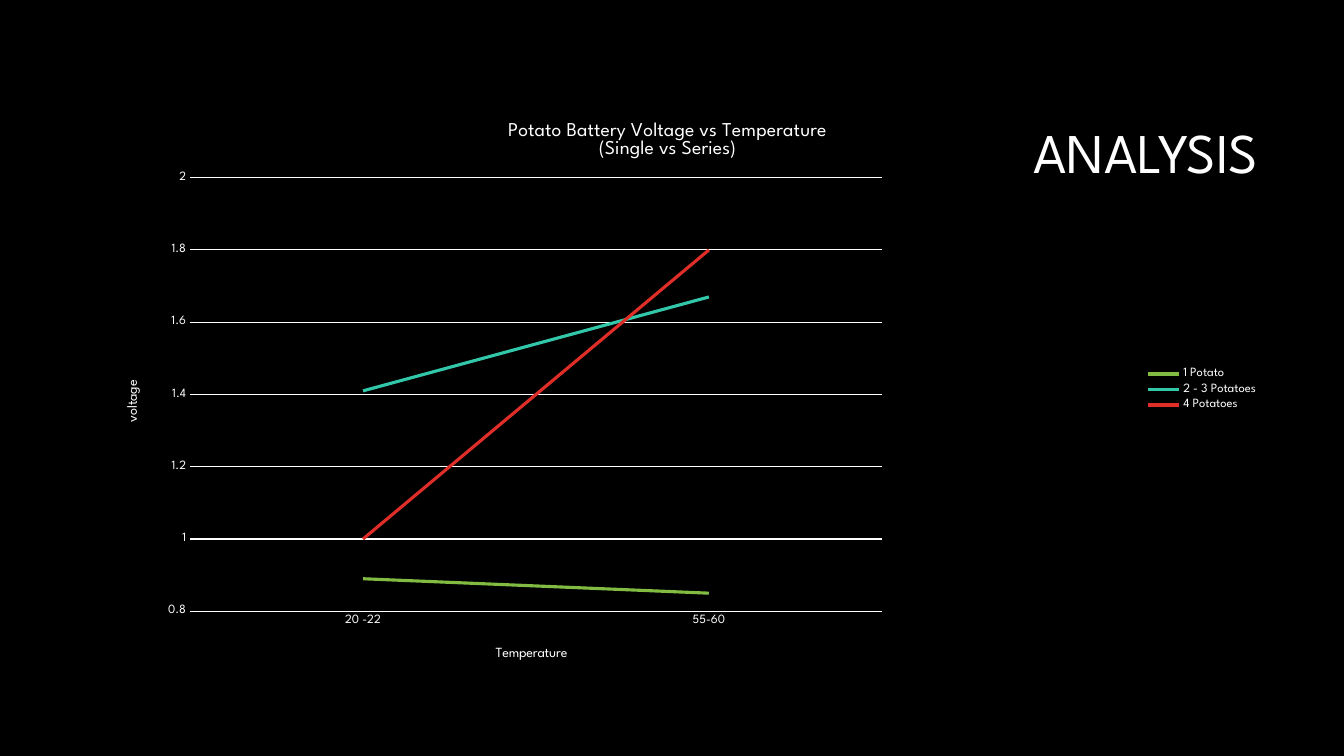
from dataclasses import dataclass

from lxml import etree
from pptx import Presentation
from pptx.chart import data as cd
from pptx.dml.color import RGBColor
from pptx.enum import chart as ec, text as et
from pptx.oxml import ns
from pptx.util import Pt

FONT = "League Spartan"
BLACK = RGBColor(0x00, 0x00, 0x00)
WHITE = RGBColor(0xFF, 0xFF, 0xFF)
GREEN = RGBColor(0x81, 0xBB, 0x42)
TEAL = RGBColor(0x32, 0xC7, 0xA9)
RED = RGBColor(0xDF, 0x2E, 0x28)


@dataclass(frozen=True)
class Battery:
    name: str
    volts: tuple[float, ...]
    color: RGBColor


TEMPERATURES = ("20 -22", "55-60")
BATTERIES = (
    Battery("1 Potato", (0.89, 0.85), GREEN),
    Battery("2 - 3 Potatoes", (1.41, 1.67), TEAL),
    Battery("4 Potatoes", (1, 1.8), RED),
)


def style_font(font, size: float) -> None:
    font.name = FONT
    font.size = Pt(size)
    font.bold = False
    font.color.rgb = WHITE


def style_line(line, color: RGBColor, width: float) -> None:
    line.color.rgb = color
    line.width = Pt(width)


def set_layout(parent, **values) -> None:
    """Place a chart part by fractions of the chart area."""
    layout = parent.find(ns.qn("c:layout"))
    if layout is None:
        layout = etree.Element(ns.qn("c:layout"))
        tx = parent.find(ns.qn("c:tx"))
        parent.insert(0 if tx is None else parent.index(tx) + 1, layout)
    for child in list(layout):
        layout.remove(child)
    manual = etree.SubElement(layout, ns.qn("c:manualLayout"))
    for tag, value in values.items():
        etree.SubElement(manual, ns.qn(f"c:{tag}")).set("val", str(value))


def write_title(title, lines: tuple[str, ...], size: float, x: float, y: float) -> None:
    tf = title.text_frame
    for i, line in enumerate(lines):
        p = tf.add_paragraph() if i else tf.paragraphs[0]
        r = p.add_run()
        r.text = line
        style_font(r.font, size)
    set_layout(title._element, xMode="edge", yMode="edge", x=x, y=y)


def style_axis(axis, caption: str, x: float, y: float) -> None:
    axis.major_tick_mark = axis.minor_tick_mark = ec.XL_TICK_MARK.NONE
    style_font(axis.tick_labels.font, 9)
    write_title(axis.axis_title, (caption,), 10, x, y)


def add_heading(s) -> None:
    sp = s.shapes.title
    sp.left, sp.top, sp.width, sp.height = Pt(228), Pt(60.5), Pt(678), Pt(101.5)
    tf = sp.text_frame
    tf.vertical_anchor = et.MSO_ANCHOR.MIDDLE
    p = tf.paragraphs[0]
    p.alignment = et.PP_ALIGN.RIGHT
    p.line_spacing = 0.9
    r = p.add_run()
    r.text = "ANALYSIS"
    style_font(r.font, 40)


def add_voltage_chart(s) -> None:
    data = cd.CategoryChartData()
    data.categories = TEMPERATURES
    for battery in BATTERIES:
        data.add_series(battery.name, battery.volts)
    chart = s.shapes.add_chart(ec.XL_CHART_TYPE.LINE, Pt(54), Pt(67),
                               Pt(852), Pt(422.5), data).chart
    style_font(chart.font, 10)
    write_title(chart.chart_title, ("Potato Battery Voltage vs Temperature",
                                    "(Single vs Series)"), 14, 0.36, 0.04)
    chart.chart_title.include_in_layout = False

    chart.has_legend = True
    chart.legend.position = ec.XL_LEGEND_POSITION.RIGHT
    chart.legend.include_in_layout = False
    style_font(chart.legend.font, 9)

    style_axis(chart.category_axis, "Temperature", 0.35, 0.93)
    style_line(chart.category_axis.format.line, WHITE, 0.75)

    volts = chart.value_axis
    style_axis(volts, "voltage", 0.04, 0.48)
    body = volts.axis_title.text_frame._txBody.bodyPr
    body.set("rot", "-5400000")
    body.set("vert", "horz")
    volts.minimum_scale, volts.maximum_scale, volts.major_unit = 0.8, 2, 0.2
    volts.format.line.fill.background()
    style_line(volts.major_gridlines.format.line, WHITE, 0.75)

    plot = chart.plots[0]
    plot.vary_by_categories = False
    for series, battery in zip(plot.series, BATTERIES):
        series.smooth = False
        series.marker.style = ec.XL_MARKER_STYLE.NONE
        style_line(series.format.line, battery.color, 2.25)
    set_layout(chart._chartSpace.chart.plotArea, layoutTarget="inner",
               xMode="edge", yMode="edge", x=0.096, y=0.142, w=0.58, h=0.733)


def main() -> None:
    prs = Presentation()
    prs.slide_width, prs.slide_height = Pt(960), Pt(540)
    s = prs.slides.add_slide(prs.slide_layouts[5])
    s.background.fill.solid()
    s.background.fill.fore_color.rgb = BLACK
    add_heading(s)
    add_voltage_chart(s)
    prs.save("out.pptx")


if __name__ == "__main__":
    main()
